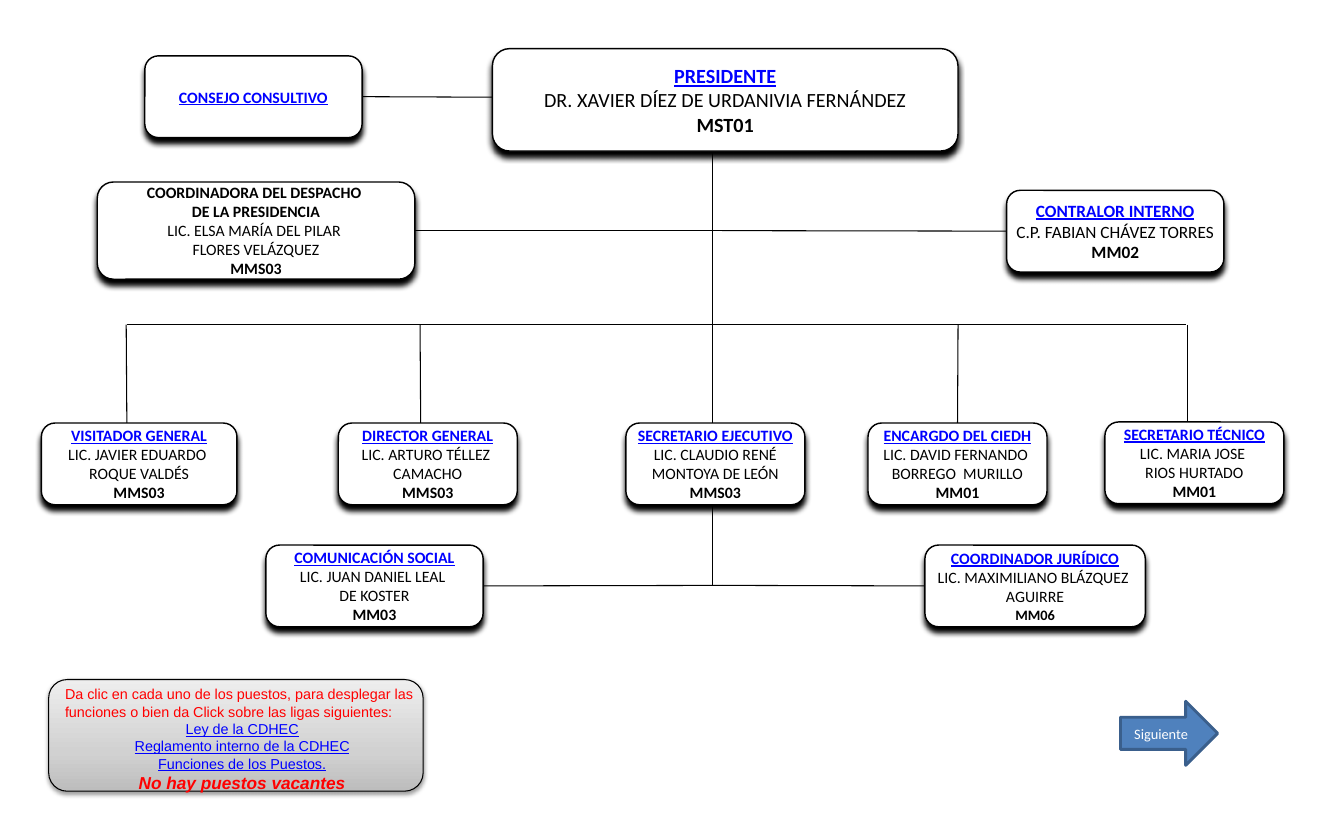
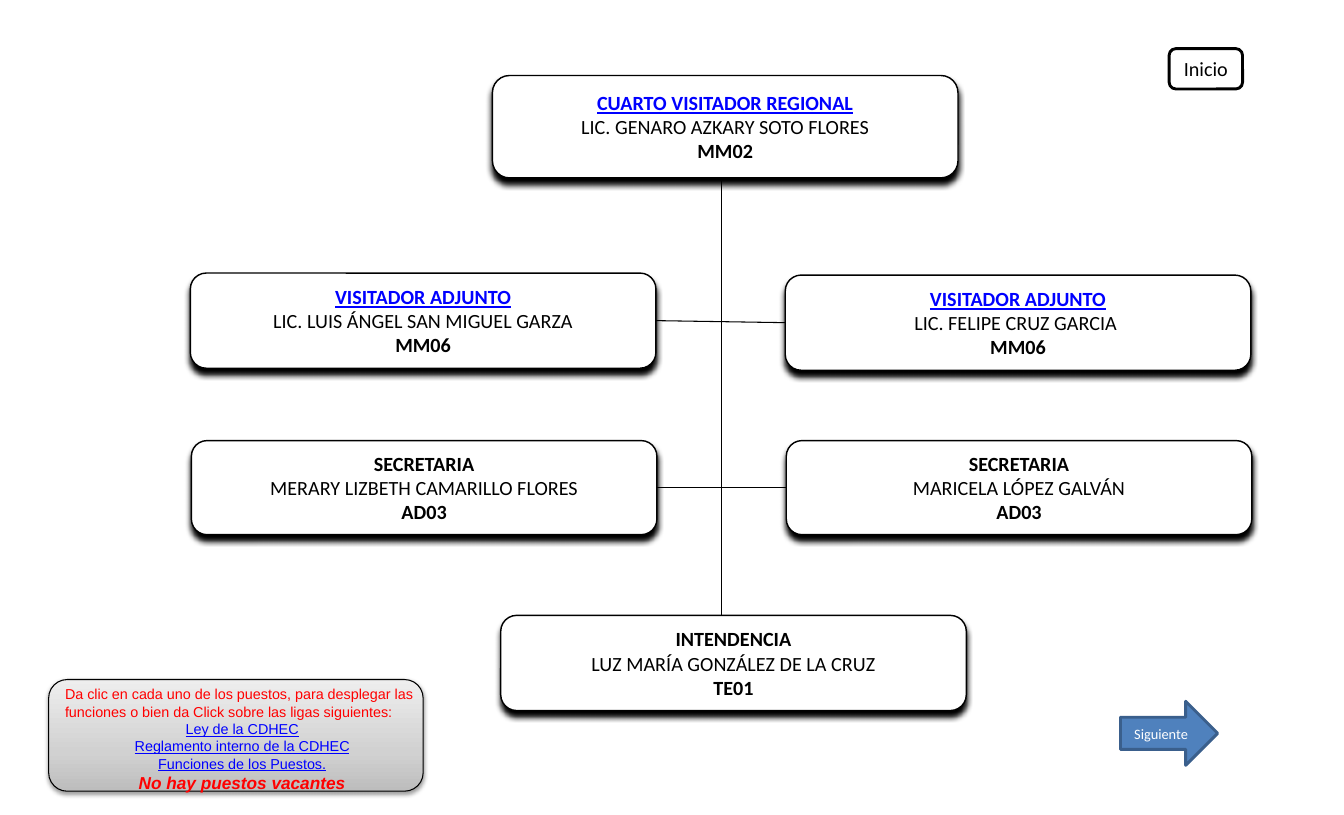
from dataclasses import dataclass

from lxml import etree
from pptx import Presentation
from pptx import util as u
from pptx.dml.color import RGBColor
from pptx.enum import shapes, text
from pptx.oxml.ns import qn

PX = 9144  # 100 px to the inch
WIDTH, HEIGHT = 1299, 788
COLORS = {"ink": "000000", "paper": "FFFFFF", "link": "0000FF", "alert": "FF0000",
          "arrow": "4F81BD", "arrow_edge": "3A5F8C"}
PANEL_STOPS = [(0, "BDBDBD"), (35, "D1D1D1"), (100, "EEEEEE")]
SNAP = 2  # px between a line end and the side it joins


@dataclass
class Post:
    at: tuple
    size: int
    titles: list
    names: list
    code: str = ""
    linked: bool = True
    code_size: int = 0


# Content: posts (left, top, width, height in px) and lines (x1, y1, x2, y2)
COMMISSION = [
    Post((476, 47, 450, 99), 14, ["PRESIDENTE"], ["DR. XAVIER DÍEZ DE URDANIVIA FERNÁNDEZ"], "MST01"),
    Post((140, 54, 210, 79), 11, ["CONSEJO CONSULTIVO"], []),
    Post((94, 176, 307, 94), 11, ["COORDINADORA DEL DESPACHO ", "DE LA PRESIDENCIA"],
         ["LIC. ELSA MARÍA DEL PILAR ", "FLORES VELÁZQUEZ"], "MMS03", linked=False),
    Post((973, 184, 210, 79), 12, ["CONTRALOR INTERNO"], ["C.P. FABIAN CHÁVEZ TORRES"], "MM02"),
    Post((40, 409, 189, 79), 11, ["VISITADOR GENERAL"], ["LIC. JAVIER EDUARDO ", "ROQUE VALDÉS"], "MMS03"),
    Post((327, 409, 173, 79), 11, ["DIRECTOR GENERAL"], ["LIC. ARTURO TÉLLEZ ", "CAMACHO"], "MMS03"),
    Post((605, 409, 173, 79), 11, ["SECRETARIO EJECUTIVO"], ["LIC. CLAUDIO RENÉ", "MONTOYA DE LEÓN"], "MMS03"),
    Post((839, 409, 173, 79), 11, ["ENCARGDO DEL CIEDH"], ["LIC. DAVID FERNANDO ", "BORREGO  MURILLO"], "MM01"),
    Post((1068, 408, 173, 79), 11, ["SECRETARIO TÉCNICO"], ["LIC. MARIA JOSE ", "RIOS HURTADO"], "MM01"),
    Post((257, 527, 210, 79), 11, ["COMUNICACIÓN SOCIAL"], ["LIC. JUAN DANIEL LEAL ", "DE KOSTER"], "MM03"),
    Post((894, 527, 213, 79), 11, ["COORDINADOR JURÍDICO"], ["LIC. MAXIMILIANO BLÁZQUEZ ", "AGUIRRE"], "MM06",
         code_size=10),
]
COMMISSION_LINES = [
    (350, 94, 476, 94), (401, 223, 698, 223), (698, 223, 973, 223),
    (689, 130, 689, 314), (689, 314, 689, 566), (123, 314, 1146, 314),
    (122, 314, 123, 465), (406, 314, 407, 465), (926, 314, 926, 409), (1148, 314, 1148, 465),
    (467, 566, 698, 566), (698, 566, 894, 566),
]
REGION = [
    Post((476, 73, 450, 99), 14, ["CUARTO VISITADOR REGIONAL"], ["LIC. GENARO AZKARY SOTO FLORES"], "MM02"),
    Post((184, 264, 450, 92), 14, ["VISITADOR ADJUNTO"], ["LIC. LUIS ÁNGEL SAN MIGUEL GARZA"], "MM06"),
    Post((759, 266, 450, 92), 14, ["VISITADOR ADJUNTO"], ["LIC. FELIPE CRUZ GARCIA "], "MM06"),
    Post((185, 426, 450, 91), 14, ["SECRETARIA"], ["MERARY LIZBETH CAMARILLO FLORES"], "AD03", linked=False),
    Post((760, 426, 450, 91), 14, ["SECRETARIA"], ["MARICELA LÓPEZ GALVÁN"], "AD03", linked=False),
    Post((484, 595, 450, 92), 14, ["INTENDENCIA"], ["LUZ MARÍA GONZÁLEZ DE LA CRUZ"], "TE01", linked=False),
]
REGION_LINES = [(697, 175, 697, 623), (634, 310, 759, 312), (635, 472, 760, 472)]

HELP = "Da clic en cada uno de los puestos, para desplegar las funciones o bien da Click sobre las ligas siguientes:"
LINKS = ["Ley de la CDHEC", "Reglamento interno de la CDHEC", "Funciones de los Puestos."]
VACANCIES = "No hay puestos vacantes"


def rgb(name):
    return RGBColor.from_string(COLORS[name])


def emu(lengths):
    return [round(length * PX) for length in lengths]


def add_child(parent, tag, **attributes):
    return etree.SubElement(parent, qn(tag), {key: str(value) for key, value in attributes.items()})


def write(frame, lines, font_name):
    """Each line is (words, size, colour, bold, underlined, italic)."""
    frame.text = "\n".join(line[0] for line in lines)
    for paragraph, (_, size, color, bold, underline, italic) in zip(frame.paragraphs, lines):
        paragraph.alignment = text.PP_ALIGN.CENTER
        font = paragraph.runs[0].font
        font.name, font.size = font_name, u.Pt(size)
        font.bold, font.underline, font.italic = bold, underline, italic
        font.color.rgb = rgb(color)


def add_box(slide, kind, at, fill, edge, weight):
    shape = slide.shapes.add_shape(kind, *emu(at))
    shape.shadow.inherit = False
    if fill:
        shape.fill.solid()
        shape.fill.fore_color.rgb = rgb(fill)
    shape.line.color.rgb = rgb(edge)
    shape.line.width = u.Pt(weight)
    return shape


def add_shadow(shape, alpha, blur, distance):
    effects = shape._element.spPr.find(qn("a:effectLst"))
    shadow = add_child(effects, "a:outerShdw", blurRad=u.Pt(blur), dist=u.Pt(distance),
                       dir=5400000, rotWithShape=0)
    color = add_child(shadow, "a:srgbClr", val=COLORS["ink"])
    add_child(color, "a:alpha", val=alpha * 1000)


def add_line(slide, ends):
    line = slide.shapes.add_connector(shapes.MSO_CONNECTOR.STRAIGHT, *emu(ends))
    line.line.color.rgb = rgb("ink")
    line.line.width = u.Pt(0.75)
    add_child(line._element.spPr, "a:effectLst")
    return line


def add_post(slide, post):
    shape = add_box(slide, shapes.MSO_SHAPE.ROUNDED_RECTANGLE, post.at, "paper", "ink", 1)
    add_shadow(shape, 100, 4, 4)
    frame = shape.text_frame
    frame.word_wrap = False
    frame.vertical_anchor = text.MSO_ANCHOR.MIDDLE
    frame.margin_left = frame.margin_right = 17 * PX
    frame.margin_top = frame.margin_bottom = 9 * PX
    title_color = "link" if post.linked else "ink"
    lines = [(title, post.size, title_color, True, post.linked, False) for title in post.titles]
    lines += [(name, post.size, "ink", False, False, False) for name in post.names]
    if post.code:
        lines.append((post.code, post.code_size or post.size, "ink", True, False, False))
    write(frame, lines, "Calibri")
    return shape


def join(line, ends, post, shape):
    """Join the line to each side of the post whose middle it touches."""
    left, top, width, height = post.at
    middles = [(left + width / 2, top), (left, top + height / 2),
               (left + width / 2, top + height), (left + width, top + height / 2)]
    for side, (x, y) in enumerate(middles):
        for end, connect in ((ends[:2], line.begin_connect), (ends[2:], line.end_connect)):
            if abs(end[0] - x) <= SNAP and abs(end[1] - y) <= SNAP:
                connect(shape, side)


def add_chart_of_posts(slide, posts, line_ends):
    # Lines lie behind the posts
    lines = [add_line(slide, ends) for ends in line_ends]
    for post in posts:
        shape = add_post(slide, post)
        for line, ends in zip(lines, line_ends):
            join(line, ends, post, shape)


def add_button(slide, kind, at, label, size, fill, edge, color):
    shape = add_box(slide, kind, at, fill, edge, 2)
    shape.text_frame.vertical_anchor = text.MSO_ANCHOR.MIDDLE
    write(shape.text_frame, [(label, size, color, False, False, False)], "Calibri")


def add_footer(slide):
    # Grey help panel
    panel = add_box(slide, shapes.MSO_SHAPE.ROUNDED_RECTANGLE, (47, 657, 362, 108), None, "ink", 0.75)
    panel.fill.gradient()
    gradient = panel._element.spPr.find(qn("a:gradFill"))
    for child in list(gradient):
        gradient.remove(child)
    stops = add_child(gradient, "a:gsLst")
    for position, color in PANEL_STOPS:
        add_child(add_child(stops, "a:gs", pos=position * 1000), "a:srgbClr", val=color)
    add_child(gradient, "a:lin", ang=270 * 60000, scaled=0)
    add_shadow(panel, 38, 3.1, 1.6)

    # Help text
    frame = slide.shapes.add_textbox(*emu((53, 658, 362, 114))).text_frame
    frame.word_wrap = True
    frame.auto_size = text.MSO_AUTO_SIZE.SHAPE_TO_FIT_TEXT
    lines = [(HELP, 10, "alert", False, False, False)]
    lines += [(link, 10, "link", False, True, False) for link in LINKS]
    lines.append((VACANCIES, 12, "alert", True, False, True))
    write(frame, lines, "Arial")
    frame.paragraphs[0].alignment = text.PP_ALIGN.LEFT

    add_button(slide, shapes.MSO_SHAPE.RIGHT_ARROW, (1083, 678, 94, 62), "Siguiente", 10,
               "arrow", "arrow_edge", "paper")


def main():
    presentation = Presentation()
    presentation.slide_width, presentation.slide_height = emu((WIDTH, HEIGHT))
    for posts, line_ends, has_home in ((COMMISSION, COMMISSION_LINES, False), (REGION, REGION_LINES, True)):
        slide = presentation.slides.add_slide(presentation.slide_layouts[6])
        add_chart_of_posts(slide, posts, line_ends)
        if has_home:
            add_button(slide, shapes.MSO_SHAPE.ROUNDED_RECTANGLE, (1130, 47, 71, 39), "Inicio", 14,
                       "paper", "ink", "ink")
        add_footer(slide)
    presentation.save("out.pptx")


if __name__ == "__main__":
    main()
